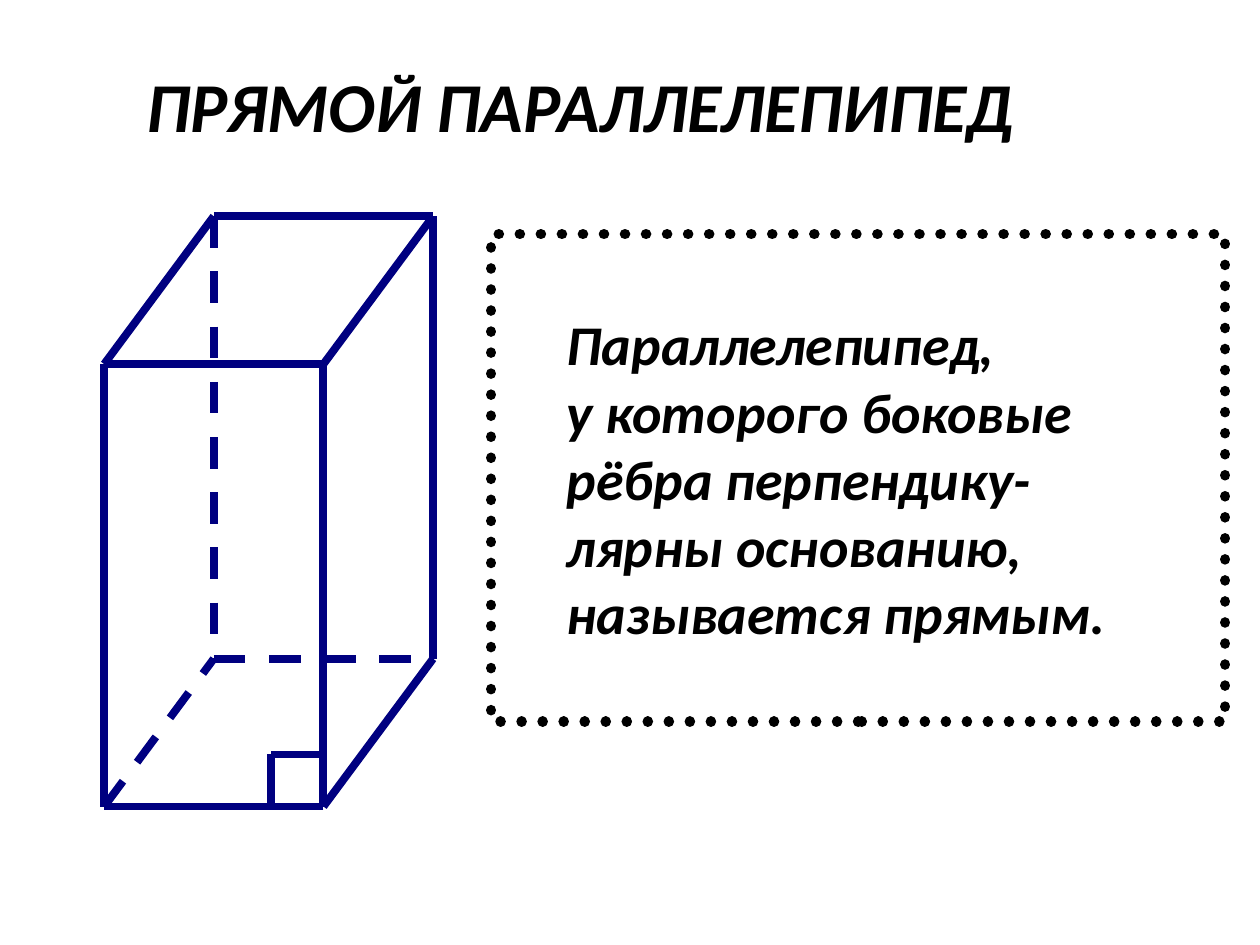
from dataclasses import dataclass

from lxml.etree import SubElement
from pptx import Presentation
from pptx.dml.color import RGBColor
from pptx.enum.dml import MSO_LINE
from pptx.enum.shapes import MSO_CONNECTOR
from pptx.enum.text import MSO_ANCHOR, MSO_AUTO_SIZE, PP_ALIGN
from pptx.oxml.ns import qn
from pptx.util import Cm, Pt


@dataclass(frozen=True)
class Theme:
    """Colours, type sizes and line widths of the slide."""

    ink: RGBColor = RGBColor(0, 0, 0)
    edge: RGBColor = RGBColor(0, 0, 0x80)
    font: str = "Calibri"
    title_size: Pt = Pt(40)
    body_size: Pt = Pt(32)
    edge_width: Pt = Pt(4.5)
    frame_width: Pt = Pt(6)


THEME = Theme()
TITLE = "ПРЯМОЙ ПАРАЛЛЕЛЕПИПЕД"
DEFINITION = (
    "Параллелепипед,",
    "у которого боковые",
    "рёбра перпендику-",
    "лярны основанию,",
    "называется прямым.",
)


def place(placeholder, left, top, width, height):
    """Move a placeholder to a box given in centimetres."""
    placeholder.left, placeholder.top = Cm(left), Cm(top)
    placeholder.width, placeholder.height = Cm(width), Cm(height)


def write(placeholder, lines, size):
    """Fill a placeholder with bold italic lines aligned left."""
    frame = placeholder.text_frame
    frame.text = "\n".join(lines)
    frame.auto_size = MSO_AUTO_SIZE.NONE
    frame.vertical_anchor = MSO_ANCHOR.MIDDLE
    for paragraph in frame.paragraphs:
        paragraph.alignment = PP_ALIGN.LEFT
        paragraph.space_before = Pt(0)
        font = paragraph.font
        font.name, font.size = THEME.font, size
        font.bold = font.italic = True
        font.color.rgb = THEME.ink


def add_title(slide):
    """Write the name of the solid."""
    title = slide.shapes.title
    place(title, 2.7, 1.12, 18.2, 1.96)
    write(title, [TITLE], THEME.title_size)
    title.text_frame.word_wrap = False


def add_definition(slide):
    """Write the definition inside a frame of round dots."""
    definition = slide.placeholders[1]
    place(definition, 9.9, 4.72, 14.8, 9.83)
    write(definition, DEFINITION, THEME.body_size)
    for paragraph in definition.text_frame.paragraphs:
        properties = paragraph._p.get_or_add_pPr()
        properties.set("marL", str(Cm(1.27)))
        properties.set("indent", "0")
        properties.insert_element_before(
            properties.makeelement(qn("a:buNone")), "a:tabLst", "a:defRPr", "a:extLst"
        )
    border = definition.line
    border.color.rgb = THEME.ink
    border.width = THEME.frame_width
    border.dash_style = MSO_LINE.ROUND_DOT
    definition._element.spPr.find(qn("a:ln")).set("cap", "rnd")


def add_edge(slide, start, end, hidden=False):
    """Draw one edge, dashed when it is hidden."""
    edge = slide.shapes.add_connector(
        MSO_CONNECTOR.STRAIGHT, *(Cm(value) for value in (*start, *end))
    )
    edge.line.color.rgb = THEME.edge
    edge.line.width = THEME.edge_width
    if hidden:
        edge.line.dash_style = MSO_LINE.DASH
    SubElement(edge._element.spPr, qn("a:effectLst"))


def add_prism(slide):
    """Draw the right parallelepiped with its right-angle mark."""
    left, top, width, height = 2.1, 7.34, 4.42, 8.92
    depth_x, depth_y, mark = 2.21, -2.98, 1.05
    right, bottom = left + width, top + height

    def back(point):
        return point[0] + depth_x, point[1] + depth_y

    top_left, top_right = (left, top), (right, top)
    bottom_left, bottom_right = (left, bottom), (right, bottom)

    for start, end, back_hidden in (
        (top_left, top_right, False),
        (top_right, bottom_right, False),
        (bottom_right, bottom_left, True),
        (bottom_left, top_left, True),
    ):
        add_edge(slide, start, end)
        if back_hidden:
            start, end = end, start
        add_edge(slide, back(start), back(end), back_hidden)
    for corner in (top_left, top_right, bottom_left, bottom_right):
        add_edge(slide, corner, back(corner), corner == bottom_left)

    mark_corner = (right - mark, bottom - mark)
    add_edge(slide, (right, bottom - mark), mark_corner)
    add_edge(slide, mark_corner, (right - mark, bottom))


def main():
    """Build and save the slide."""
    presentation = Presentation()
    presentation.slide_width, presentation.slide_height = Cm(25.4), Cm(19.05)
    slide = presentation.slides.add_slide(presentation.slide_layouts[1])
    add_title(slide)
    add_definition(slide)
    add_prism(slide)
    presentation.save("out.pptx")


if __name__ == "__main__":
    main()
